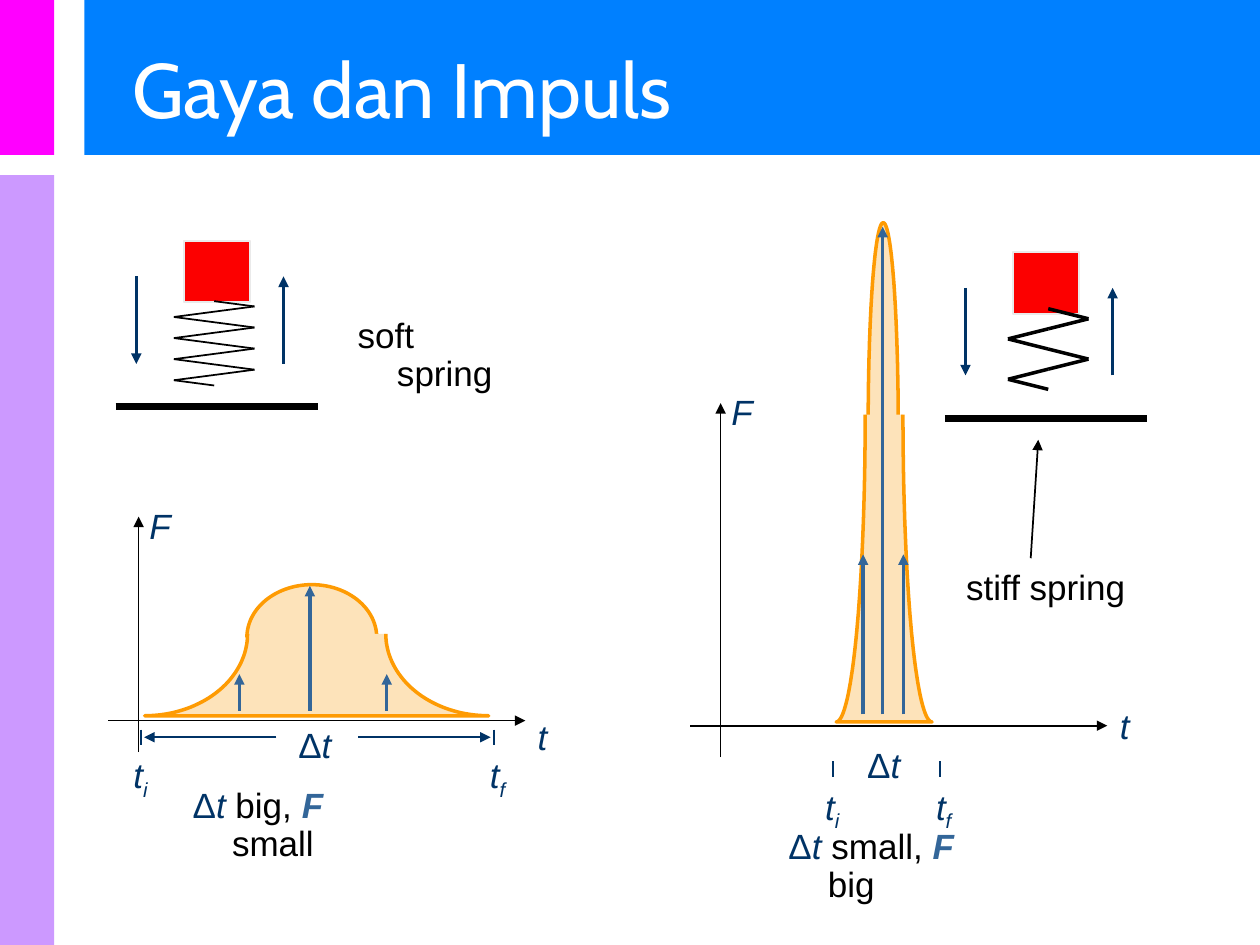
from itertools import pairwise
from math import cos, pi, sin

from lxml.etree import SubElement
from pptx import Presentation
from pptx.dml.color import RGBColor
from pptx.enum.shapes import MSO_CONNECTOR as Conn, MSO_SHAPE as Shape
from pptx.enum.text import MSO_ANCHOR as Anchor
from pptx.oxml.ns import qn
from pptx.util import Pt

WHITE = RGBColor(0xFF, 0xFF, 0xFF)
BLACK = RGBColor(0, 0, 0)
BLUE = RGBColor(0x00, 0x80, 0xFF)
MAGENTA = RGBColor(0xFF, 0x00, 0xFF)
LILAC = RGBColor(0xCC, 0x99, 0xFF)
NAVY = RGBColor(0x00, 0x33, 0x66)
STEEL = RGBColor(0x33, 0x66, 0x99)
RED = RGBColor(0xFC, 0, 0)
PALE = RGBColor(0xEA, 0xEA, 0xEA)
CREAM = RGBColor(0xFD, 0xE3, 0xBA)
ORANGE = RGBColor(0xFE, 0x9B, 0x03)

# Run styles: colour, italic, bold, subscript
PLAIN = (BLACK, False, False, False)
SYMBOL = (NAVY, False, False, False)
VAR = (NAVY, True, False, False)
SUB = (NAVY, True, False, True)
FORCE = (STEEL, True, True, False)
DELTA_T = [("Δ", SYMBOL), ("t", VAR)]

TITLE = "Gaya dan Impuls"

# Left, top, width, height, colour
BANDS = [
    (48.24, 0, 671.76, 88.56, BLUE),
    (0, 0, 30.96, 88.56, MAGENTA),
    (0, 100.08, 30.96, 439.92, LILAC),
]

# dome: centre x, base y, half width, height
# skirt: centre x, top y, base y, half width at top, half width at base
# forces: base y, then (x, tip y) of each arrow
GRAPHS = [
    {"origin": (79.2, 411.8), "f_tip": 295.2, "t_label_y": 408.2,
     "dome": (178.2, 364.3, 37.1, 30.2), "skirt": (181, 362.2, 409, 39.5, 98.3),
     "forces": (406.1, [(136.8, 385.2), (221, 385.2), (177.1, 334.8)]),
     "ticks": (80.6, 282.2, 416.9), "delta_y": 412.6, "span_arrows": True,
     "caption": (103, 447.1, " big, ", " small")},
    {"origin": (411.8, 414.7), "f_tip": 230.4, "t_label_y": 401.8,
     "dome": (504.7, 244.1, 8.6, 116.8), "skirt": (505.2, 236.9, 412.6, 10.8, 27.4),
     "forces": (408.2, [(493.2, 316.8), (516.2, 316.8), (504.4, 129.6)]),
     "ticks": (475.9, 537.1, 435.1), "delta_y": 424.1, "span_arrows": False,
     "caption": (443.5, 470.2, " small, ", " big")},
]

# block: left, top; coil: centre x, top, bottom, segments, line width
# label: left, top, width
SPRINGS = [
    {"block": (105.1, 137.5), "coil": (122.4, 172.1, 220.3, 16, 1),
     "name": "soft spring", "label": (197.3, 178.6, 92)},
    {"block": (578.9, 144), "coil": (599, 176.4, 222.5, 8, 2),
     "name": "stiff spring", "label": (545, 322.6, 115)},
]
POINTER = (589, 319, 593.3, 251.3)    # from the stiff spring's name to its floor

BLOCK_W, BLOCK_H = 37.8, 35.3
COIL_SWING = 23
TICK_H = 8.8
STEPS = 40                            # segments in a quarter ellipse
INDENT = 22.5


def paint(sp, fill, line=None, width=1):
    sp.shadow.inherit = False
    sp.fill.solid()
    sp.fill.fore_color.rgb = fill
    if line is None:
        sp.line.fill.background()
    else:
        sp.line.color.rgb = line
        sp.line.width = Pt(width)


def add_rect(x, y, w, h, fill, line=None):
    paint(s.shapes.add_shape(Shape.RECTANGLE, Pt(x), Pt(y), Pt(w), Pt(h)), fill, line)


def add_line(x1, y1, x2, y2, color, width, arrow=False):
    c = s.shapes.add_connector(Conn.STRAIGHT, Pt(x1), Pt(y1), Pt(x2), Pt(y2))
    c.line.color.rgb = color
    c.line.width = Pt(width)
    if arrow:
        SubElement(c.line._get_or_add_ln(), qn("a:tailEnd"), type="triangle")
    SubElement(c._element.spPr, qn("a:effectLst"))


def add_arrow(x1, y1, x2, y2, color, width):
    add_line(x1, y1, x2, y2, color, width, arrow=True)


def add_curve(points):
    start, *rest = [(Pt(x), Pt(y)) for x, y in points]
    fb = s.shapes.build_freeform(*start)
    fb.add_line_segments(rest, close=False)
    paint(fb.convert_to_shape(), CREAM, ORANGE, 2)


def add_text_box(x, y, w, h):
    tf = s.shapes.add_textbox(Pt(x), Pt(y), Pt(w), Pt(h)).text_frame
    tf.word_wrap = True
    return tf


def add_run(p, text, size, font, color):
    r = p.add_run()
    r.text = text
    r.font.size, r.font.name = Pt(size), font
    r.font.color.rgb = color
    return r


def add_label(x, y, w, runs):
    """Write styled runs in a box with a hanging indent."""
    p = add_text_box(x, y, w, 28.8).paragraphs[0]
    p.line_spacing = 0.9
    pPr = p._p.get_or_add_pPr()
    pPr.set("marL", str(Pt(INDENT)))
    pPr.set("indent", str(-Pt(INDENT)))
    for text, (color, italic, bold, sub) in runs:
        r = add_run(p, text, 20, "Arial", color)
        r.font.italic, r.font.bold = italic, bold
        if sub:
            r.font._element.set("baseline", "-25000")


def dome_points(cx, base, rx, ry):
    """Upper half of an ellipse, left to right."""
    angles = [pi * i / (2 * STEPS) for i in range(2 * STEPS + 1)]
    return [(cx - rx * cos(a), base - ry * sin(a)) for a in angles]


def skirt_points(cx, top, base, top_half, base_half):
    """Two quarter ellipses that flare out to the base: down the left, up the right."""
    angles = [pi / 2 * i / STEPS for i in range(STEPS + 1)]
    side = [(top_half + (base_half - top_half) * (1 - cos(a)),
             top + (base - top) * sin(a)) for a in angles]
    return [(cx - half, y) for half, y in side] + [(cx + half, y) for half, y in side[::-1]]


def draw_graph(g):
    # Impulse curve and force arrows
    add_curve(dome_points(*g["dome"]))
    add_curve(skirt_points(*g["skirt"]))
    base, tips = g["forces"]
    for x, tip in tips:
        add_arrow(x, base, x, tip, STEEL, 2)

    # Axes and their names
    ox, oy = g["origin"]
    t_tip = ox + 221
    add_arrow(ox, oy + 18, ox, g["f_tip"], BLACK, 1)
    add_arrow(ox - 17.3, oy, t_tip, oy, BLACK, 1)
    add_label(ox - 1, g["f_tip"] - 8, 32, [("F", VAR)])
    add_label(t_tip, g["t_label_y"], 24, [("t", VAR)])

    # Time interval from t_i to t_f
    ti, tf, y = g["ticks"]
    middle = (ti + tf) / 2
    for x, index, shift in [(ti, "i", 11.5), (tf, "f", 9.3)]:
        add_line(x, y, x, y + TICK_H, NAVY, 1)
        add_label(x - shift, y + 10.4, 30, [("t", VAR), (index, SUB)])
    add_label(middle - 18, g["delta_y"], 42, DELTA_T)
    if g["span_arrows"]:
        for side, end in [(-1, ti), (1, tf)]:
            add_arrow(middle + 23.4 * side, y + TICK_H / 2,
                      end - 1.8 * side, y + TICK_H / 2, NAVY, 1)

    x, y, duration, strength = g["caption"]
    add_label(x, y, 122, DELTA_T + [(duration, PLAIN), ("F", FORCE), (strength, PLAIN)])


def draw_spring(spring):
    # Block, floor and motion arrows
    x, y = spring["block"]
    add_rect(x, y, BLOCK_W, BLOCK_H, RED, PALE)
    add_line(x - 39, y + 95, x + 76.5, y + 95, BLACK, 4)
    high, low = y + 20.5, y + 70.5
    add_arrow(x - 27.2, high, x - 27.2, low, NAVY, 2)
    add_arrow(x + 56.9, low, x + 56.9, high, NAVY, 2)

    # Coil: centre, right, centre, left, and so on down
    cx, top, bottom, n, width = spring["coil"]
    turns = [(cx + COIL_SWING * (0, 1, 0, -1)[i % 4], top + (bottom - top) * i / n)
             for i in range(n + 1)]
    for start, end in pairwise(turns):
        add_line(*start, *end, BLACK, width)
    add_label(*spring["label"], [(spring["name"], PLAIN)])


prs = Presentation()
prs.slide_width, prs.slide_height = Pt(720), Pt(540)
s = prs.slides.add_slide(prs.slide_layouts[6])
s.background.fill.solid()
s.background.fill.fore_color.rgb = WHITE

# Bands and title
for band in BANDS:
    add_rect(*band)
title = add_text_box(68.4, 22.3, 643, 55.4)
title.vertical_anchor = Anchor.MIDDLE
add_run(title.paragraphs[0], TITLE, 44, "Cabin", WHITE)

# Graphs and springs
for graph in GRAPHS:
    draw_graph(graph)
for spring in SPRINGS:
    draw_spring(spring)
add_arrow(*POINTER, BLACK, 1)

prs.save("out.pptx")
